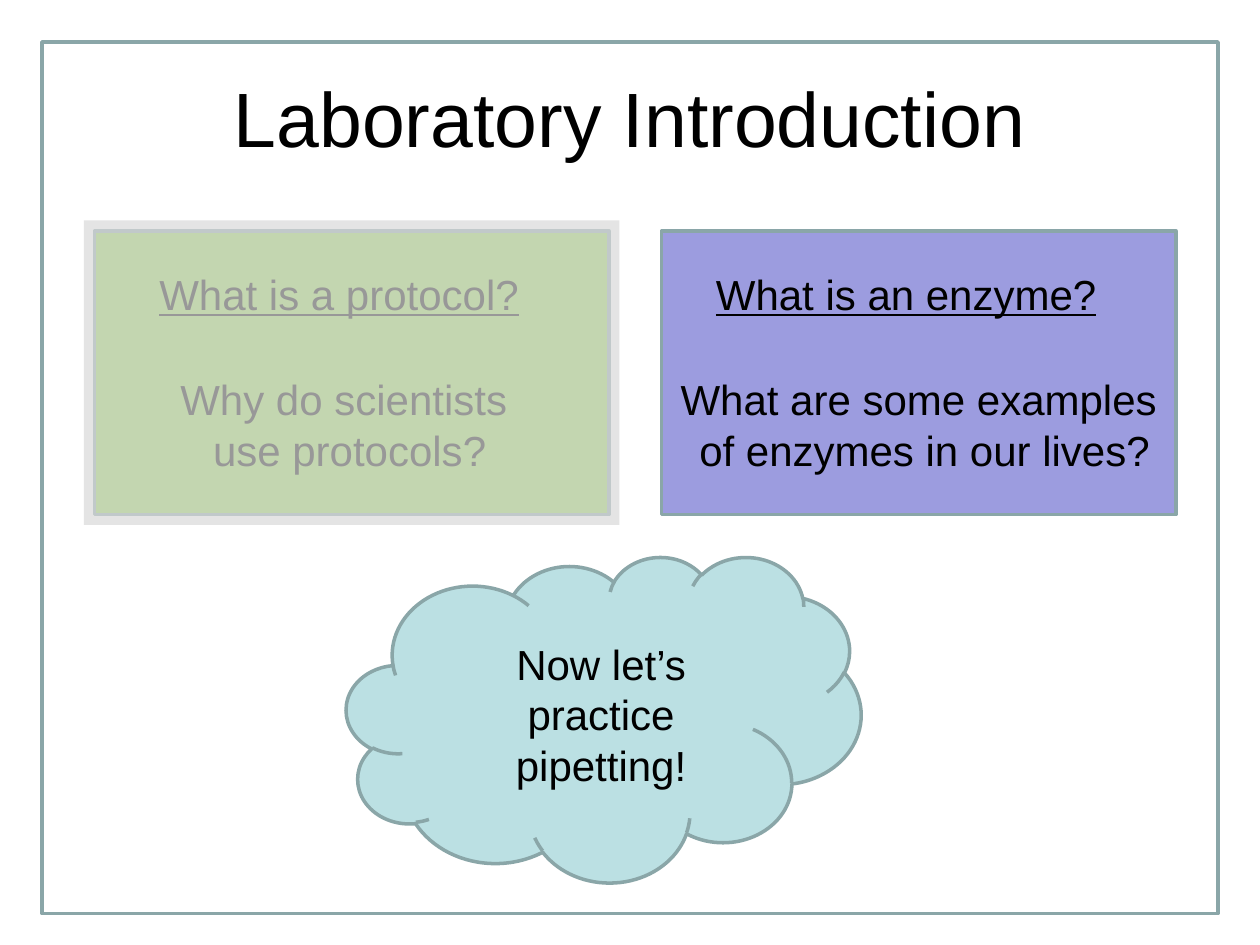
from lxml import etree
from pptx import Presentation
from pptx.dml.color import RGBColor
from pptx.enum.shapes import MSO_SHAPE
from pptx.enum.text import MSO_ANCHOR, MSO_AUTO_SIZE, PP_ALIGN
from pptx.oxml.ns import qn
from pptx.util import Inches, Pt

RECTANGLE, CLOUD = MSO_SHAPE.RECTANGLE, MSO_SHAPE.CLOUD
LEFT, CENTER = PP_ALIGN.LEFT, PP_ALIGN.CENTER
TOP, MIDDLE = MSO_ANCHOR.TOP, MSO_ANCHOR.MIDDLE
GROW, FIXED = MSO_AUTO_SIZE.SHAPE_TO_FIT_TEXT, MSO_AUTO_SIZE.NONE
COLORS = {
    "text": "000000",
    "outline": "8AA6A8",
    "enzyme": "9C9CDF",
    "protocol": "92D050",
    "cloud": "BBE0E3",
    "veil": "D9D9D9",
}
COLUMNS, ROWS = 120, 90

deck = Presentation()
deck.slide_width, deck.slide_height = Inches(10), Inches(7.5)
page = deck.slides.add_slide(deck.slide_layouts[6])
column, row = deck.slide_width // COLUMNS, deck.slide_height // ROWS


def add_panel(kind, left, top, width, height, fill=None, outline="outline"):
    panel = page.shapes.add_shape(
        kind, int(left * column), int(top * row), int(width * column), int(height * row))
    panel.shadow.inherit = False
    if fill:
        panel.fill.solid()
        panel.fill.fore_color.rgb = RGBColor.from_string(COLORS[fill])
    else:
        panel.fill.background()
    if outline:
        panel.line.color.rgb = RGBColor.from_string(COLORS[outline])
        panel.line.width = Pt(2)
    else:
        panel.line.fill.background()
    return panel


def add_label(text, left, top, width, height, align=CENTER, size=24,
              underline=False, wrap=False, anchor=TOP, fit=GROW):
    box = page.shapes.add_textbox(
        int(left * column), int(top * row), int(width * column), int(height * row))
    frame_format = {"word_wrap": wrap, "auto_size": fit, "vertical_anchor": anchor}
    for name, value in frame_format.items():
        setattr(box.text_frame, name, value)
    para = box.text_frame.paragraphs[0]
    para.text = text
    para.alignment = align
    font_format = {"name": "Arial", "size": Pt(size), "underline": underline}
    for span in para.runs:
        for name, value in font_format.items():
            setattr(span.font, name, value)
        span.font.color.rgb = RGBColor.from_string(COLORS["text"])


for left, fill in ((63, "enzyme"), (9, "protocol")):
    add_panel(RECTANGLE, left, 22, 49, 27, fill)

add_label("Laboratory Introduction", 6, 3.6, 108, 15, size=44,
          wrap=True, anchor=MIDDLE, fit=FIXED)

for text, left, width in (("What is a protocol?", 14, 37), ("What is an enzyme?", 67, 39)):
    add_label(text, left, 25, width, 6.1, align=LEFT, underline=True)

for text, left, width in (
    ("Why do scientists \nuse protocols?", 15.8, 35),
    ("What are some examples \nof enzymes in our lives?", 63.4, 49.3),
):
    add_label(text, left, 35, width, 10.9)

add_panel(CLOUD, 33, 53, 49, 31, "cloud")
add_label("Now let’s\npractice\npipetting!", 47.9, 60.2, 18.7, 15.7)

add_panel(RECTANGLE, 4, 4, 112, 83)

veil = add_panel(RECTANGLE, 8, 21, 51, 29, "veil", outline=None)
veil_color = veil.fill._xPr.find(qn("a:solidFill"))[0]
etree.SubElement(veil_color, qn("a:alpha")).set("val", "70000")

deck.save("out.pptx")
